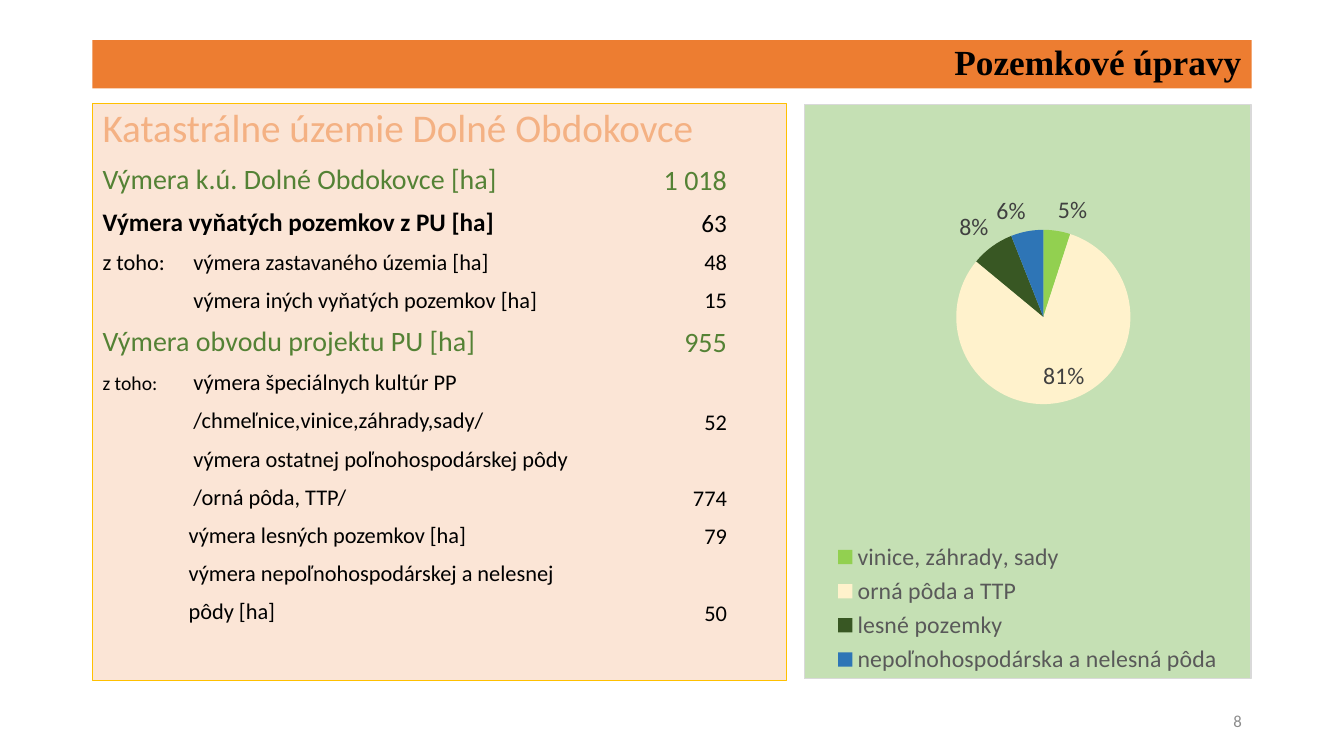
from dataclasses import dataclass

from lxml.etree import SubElement
from pptx import Presentation
from pptx.chart.data import CategoryChartData
from pptx.dml.color import RGBColor
from pptx.enum.chart import XL_CHART_TYPE as ChartType
from pptx.enum.chart import XL_LABEL_POSITION as LabelPosition
from pptx.enum.chart import XL_LEGEND_POSITION as LegendPosition
from pptx.enum.text import MSO_ANCHOR as Anchor
from pptx.enum.text import MSO_AUTO_SIZE as AutoSize
from pptx.enum.text import PP_ALIGN as Align
from pptx.oxml import parse_xml
from pptx.oxml.ns import nsdecls, qn
from pptx.util import Cm, Pt


@dataclass(frozen=True)
class Theme:
    body_font: str = "Calibri"
    title_font: str = "Times New Roman"
    black: str = "000000"
    title_fill: str = "ED7D31"
    body_fill: str = "FBE5D6"
    body_line: str = "FFC000"
    heading: str = "F4B183"
    total: str = "548235"
    chart_fill: str = "C5E0B4"
    chart_line: str = "D9D9D9"
    label: str = "404040"
    legend: str = "595959"
    number: str = "8C8C8C"
    title_size: float = 25.2
    heading_size: int = 28
    total_size: int = 20
    subtotal_size: int = 18
    detail_size: int = 16
    small_size: int = 14
    chart_size: int = 17
    number_size: int = 12
    line_width: float = 0.75
    line_spacing: float = 0.9
    line_height: float = 1.1
    row_gap: int = 10


THEME = Theme()

HEADING = (THEME.heading_size, THEME.heading, 0)
TOTAL = (THEME.total_size, THEME.total, 0)
SUBTOTAL = (THEME.subtotal_size, THEME.black, 0)
DETAIL = (THEME.detail_size, THEME.black, 2.29)
LAST_DETAIL = (THEME.detail_size, THEME.black, 2.17)
BOLD = {"bold": True}
SMALL = {"size": Pt(THEME.small_size)}

AREA_ROWS = [
    (HEADING, [("Katastrálne územie Dolné Obdokovce", {})], ""),
    (TOTAL, [("Výmera k.ú. Dolné Obdokovce [ha]", {})], "1 018"),
    (SUBTOTAL, [("Výmera vyňatých pozemkov z PU [ha]", BOLD)], "63"),
    (DETAIL, [("z toho:\tvýmera zastavaného územia [ha]", {})], "48"),
    (DETAIL, [("výmera iných vyňatých pozemkov [ha]", {})], "15"),
    (TOTAL, [("Výmera obvodu projektu PU [ha]", {})], "955"),
    (DETAIL, [("z toho:", SMALL), ("\tvýmera špeciálnych kultúr PP", {})], ""),
    (DETAIL, [("/chmeľnice,vinice,záhrady,sady/", {})], "52"),
    (DETAIL, [("výmera ostatnej poľnohospodárskej pôdy", {})], ""),
    (DETAIL, [("/orná pôda, TTP/", {})], "774"),
    (LAST_DETAIL, [("výmera lesných pozemkov [ha]", {})], "79"),
    (LAST_DETAIL, [("výmera nepoľnohospodárskej a nelesnej", {})], ""),
    (LAST_DETAIL, [("pôdy [ha]", {})], "50"),
]

LAND_SHARES = [
    ("vinice, záhrady, sady", 0.05, "92D050"),
    ("orná pôda a TTP", 0.81, "FFF2CC"),
    ("lesné pozemky", 0.08, "385723"),
    ("nepoľnohospodárska a nelesná pôda", 0.06, "2E75B6"),
]


class SlideBuilder:
    def __init__(self, deck, theme):
        self.theme = theme
        self.slide = deck.slides.add_slide(deck.slide_layouts[1])

    def style_font(self, font, size, color, name=None, bold=False):
        font.name = name or self.theme.body_font
        font.size = Pt(size)
        font.bold = bold
        font.color.rgb = RGBColor.from_string(color)

    def place(self, box, bounds, fill):
        box.left, box.top, box.width, box.height = map(Cm, bounds)
        box.fill.solid()
        box.fill.fore_color.rgb = RGBColor.from_string(fill)
        box.text_frame.auto_size = AutoSize.NONE
        box.text_frame.word_wrap = True

    def title(self, text, bounds):
        box = self.slide.shapes.title
        self.place(box, bounds, self.theme.title_fill)
        box.text_frame.vertical_anchor = Anchor.MIDDLE
        para = box.text_frame.paragraphs[0]
        para.text = text
        para.alignment = Align.RIGHT
        para.line_spacing = self.theme.line_spacing
        self.style_font(para.font, self.theme.title_size, self.theme.black,
                        self.theme.title_font, True)

    def body(self, rows, bounds):
        box = self.slide.placeholders[1]
        self.place(box, bounds, self.theme.body_fill)
        box.line.color.rgb = RGBColor.from_string(self.theme.body_line)
        box.line.width = Pt(self.theme.line_width)
        frame = box.text_frame
        for index, ((size, color, indent), spans, _) in enumerate(rows):
            para = frame.add_paragraph() if index else frame.paragraphs[0]
            para.line_spacing = self.theme.line_spacing
            para.space_before = Pt(self.theme.row_gap)
            has_lead = any("\t" in text for text, _ in spans)
            self.set_indent(para, Cm(indent), has_lead)
            self.style_font(para.font, size, color)
            for text, changes in spans:
                span = para.add_run()
                span.text = text
                for attribute, value in changes.items():
                    setattr(span.font, attribute, value)

    def set_indent(self, para, indent, hanging):
        properties = para._p.get_or_add_pPr()
        properties.set("marL", str(int(indent)))
        properties.set("indent", str(-int(indent) if hanging else 0))
        SubElement(properties, qn("a:buNone"))

    def values(self, rows, left, body_top, width, height):
        theme = self.theme
        box = self.slide.shapes.add_textbox(Cm(left), Cm(body_top), Cm(width), Cm(height))
        frame = box.text_frame
        frame.word_wrap = True
        para, gap = None, 0
        for (size, color, _), _, value in rows:
            gap += theme.row_gap if para or gap else 0
            if not value:
                gap += size * theme.line_height
                continue
            if para is None:
                box.top += Pt(gap)
                para = frame.paragraphs[0]
            else:
                para = frame.add_paragraph()
                para.space_before = Pt(gap)
            para.text = value
            para.alignment = Align.RIGHT
            para.line_spacing = theme.line_spacing
            self.style_font(para.font, size, color)
            gap = 0

    def pie(self, shares, bounds, plot_bounds):
        theme = self.theme
        data = CategoryChartData(number_format="0%")
        data.categories = [name for name, _, _ in shares]
        data.add_series("Series 1", [value for _, value, _ in shares])
        chart = self.slide.shapes.add_chart(ChartType.PIE, *map(Cm, bounds), data).chart
        chart.has_title = False
        self.style_font(chart.font, theme.chart_size, theme.black)
        chart.has_legend = True
        chart.legend.position = LegendPosition.BOTTOM
        chart.legend.include_in_layout = False
        self.style_font(chart.legend.font, theme.chart_size, theme.legend)
        plot = chart.plots[0]
        plot.vary_by_categories = True
        for index, (_, _, color) in enumerate(shares):
            point = plot.series[0].points[index]
            point.format.fill.solid()
            point.format.fill.fore_color.rgb = RGBColor.from_string(color)
            point.format.line.fill.background()
        labels = plot.series[0].data_labels
        labels.show_value = True
        labels.number_format = "0%"
        labels.number_format_is_linked = False
        labels.position = LabelPosition.BEST_FIT
        self.style_font(labels.font, theme.chart_size, theme.label)
        self.frame_chart(chart)
        self.lay_out_plot(chart, plot_bounds)

    def frame_chart(self, chart):
        theme = self.theme
        chart.element.find(qn("c:chart")).addnext(parse_xml(
            f'<c:spPr {nsdecls("c", "a")}>'
            f'<a:solidFill><a:srgbClr val="{theme.chart_fill}"/></a:solidFill>'
            f'<a:ln w="{Pt(theme.line_width)}"><a:solidFill>'
            f'<a:srgbClr val="{theme.chart_line}"/></a:solidFill></a:ln></c:spPr>'))

    def lay_out_plot(self, chart, plot_bounds):
        area = chart.element.find(qn("c:chart")).find(qn("c:plotArea"))
        for previous in area.findall(qn("c:layout")):
            area.remove(previous)
        layout = parse_xml(f'<c:layout {nsdecls("c")}/>')
        area.insert(0, layout)
        manual = SubElement(layout, qn("c:manualLayout"))
        settings = [("layoutTarget", "inner"), ("xMode", "edge"), ("yMode", "edge")]
        for tag, value in settings + list(zip("xywh", plot_bounds)):
            SubElement(manual, qn(f"c:{tag}"), val=str(value))

    def page_number(self, text, bounds):
        box = self.slide.shapes.add_textbox(*map(Cm, bounds))
        box.text_frame.word_wrap = True
        box.text_frame.vertical_anchor = Anchor.MIDDLE
        para = box.text_frame.paragraphs[0]
        para.text = text
        para.alignment = Align.RIGHT
        self.style_font(para.font, self.theme.number_size, self.theme.number)


def main():
    deck = Presentation()
    deck.slide_width, deck.slide_height = Cm(33.87), Cm(19.05)
    page = SlideBuilder(deck, THEME)
    page.title("Pozemkové úpravy", (2.33, 1.01, 29.21, 1.22))
    page.body(AREA_ROWS, (2.33, 2.62, 17.5, 14.54))
    page.values(AREA_ROWS, 14.5, 2.62, 4.07, 13)
    page.pie(LAND_SHARES, (20.26, 2.62, 11.28, 14.5), (0.34, 0.05, 0.39, 0.64))
    page.page_number("8", (23.93, 17.65, 7.62, 1.02))
    deck.save("out.pptx")


if __name__ == "__main__":
    main()
